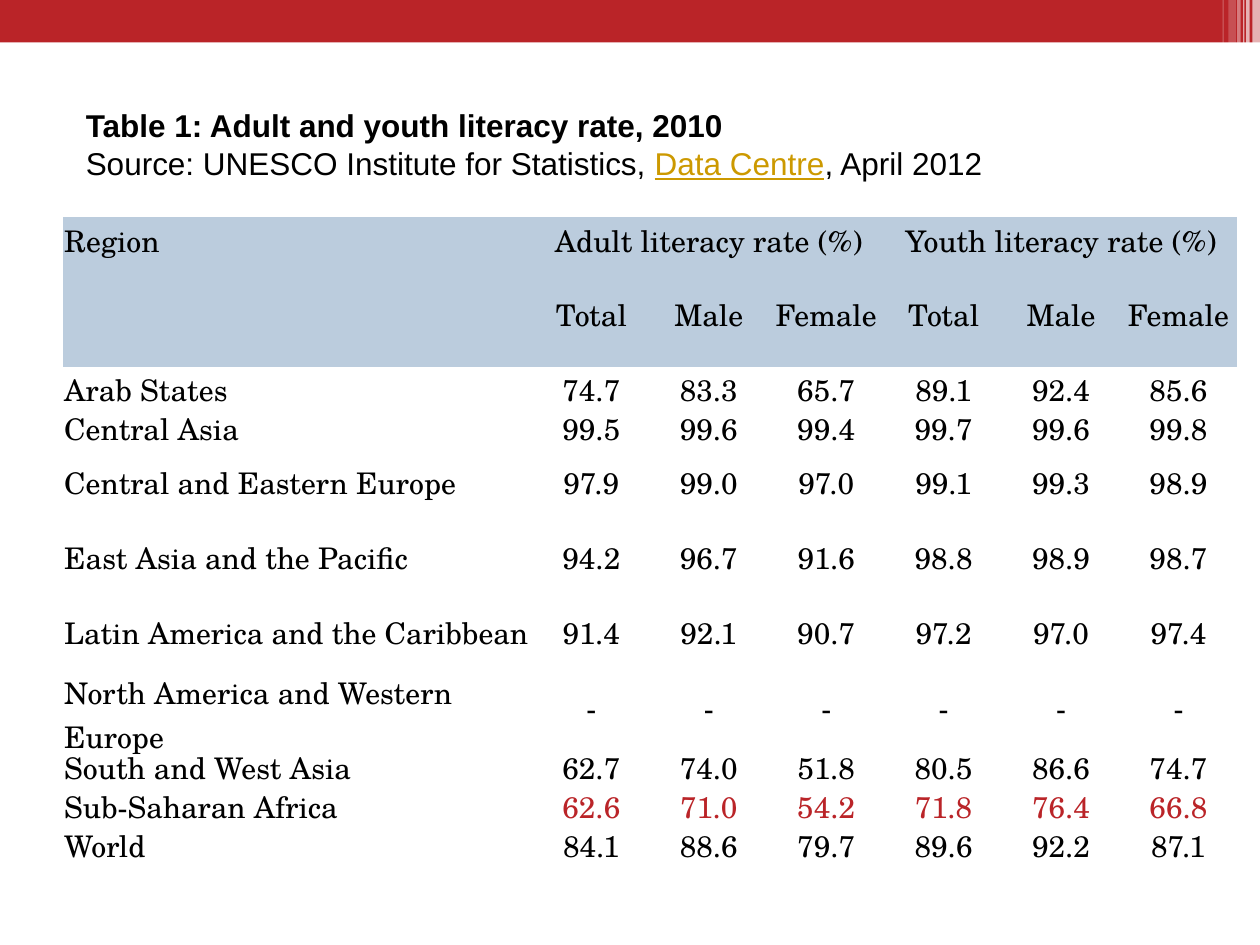
"""Build a slide with a table of adult and youth literacy rates by region."""
import pptx
import pptx.dml.color
import pptx.enum.shapes
import pptx.enum.text
import pptx.util
from lxml import etree

Pt = pptx.util.Pt
ALIGN = pptx.enum.text.PP_ALIGN
ANCHOR = pptx.enum.text.MSO_ANCHOR
RED, BLACK, WHITE, HEADER_BLUE, GOLD = "BA2428", "000000", "FFFFFF", "BBCCDD", "CC9900"

HEADING = [
    [("Table 1: Adult and youth literacy rate, 2010", BLACK, {"bold": True})],
    [
        ("Source: UNESCO Institute for Statistics, ", BLACK, {}),
        ("Data Centre", GOLD, {"underline": True}),
        (", April 2012", BLACK, {}),
    ],
]
GROUPS = ["Adult literacy rate (%)", "Youth literacy rate (%)"]
MEASURES = ["Total", "Male", "Female"]
TALL, SHORT = 42.85, 22.3
REGIONS = [
    ("Arab States", SHORT, "74.7 83.3 65.7 89.1 92.4 85.6"),
    ("Central Asia", SHORT, "99.5 99.6 99.4 99.7 99.6 99.8"),
    ("Central and Eastern Europe", TALL, "97.9 99.0 97.0 99.1 99.3 98.9"),
    ("East Asia and the Pacific", TALL, "94.2 96.7 91.6 98.8 98.9 98.7"),
    ("Latin America and the Caribbean", TALL, "91.4 92.1 90.7 97.2 97.0 97.4"),
    ("North America and Western Europe", TALL, "- - - - - -"),
    ("South and West Asia", SHORT, "62.7 74.0 51.8 80.5 86.6 74.7"),
    ("Sub-Saharan Africa", SHORT, "62.6 71.0 54.2 71.8 76.4 66.8"),
    ("World", SHORT, "84.1 88.6 79.7 89.6 92.2 87.1"),
]
HIGHLIGHTED = "Sub-Saharan Africa"
STRIPES = [
    (715.7, 4.3, 49, 65),
    (712.1, 2, 49, 65),
    (710.4, 0.7, 49, 60),
    (707, 2, 49, 40),
    (702, 4.3, 46, 20),
    (698.6, 0.7, 46, 30),
]
TABLE_LEFT, TABLE_TOP, REGION_WIDTH, RATE_WIDTH = 36, 124, 268.4, 67.1
NO_GRID_STYLE = "{2D5ABB26-0587-4C30-8999-92F81FD0307C}"
CELL_FORMAT = {f"margin_{side}": Pt(0.7) for side in ("left", "right", "top", "bottom")}


def apply(target, values):
    for name, value in values.items():
        setattr(target, name, value)


def paint(color_format, hex_color):
    color_format.rgb = pptx.dml.color.RGBColor.from_string(hex_color)


def add_run(paragraph, text, hex_color, **font_values):
    run = paragraph.add_run()
    run.text = text
    apply(run.font, font_values)
    paint(run.font.color, hex_color)


def add_band(slide, left, width, height, hex_color, opacity=100):
    band = slide.shapes.add_shape(
        pptx.enum.shapes.MSO_SHAPE.RECTANGLE, Pt(left), 0, Pt(width), Pt(height)
    )
    band.shadow.inherit = False
    band.line.fill.background()
    band.fill.solid()
    paint(band.fill.fore_color, hex_color)
    if opacity < 100:
        tint = next(band.fill._xPr.iter("{*}srgbClr"))
        tag = etree.QName(tint.tag)
        etree.SubElement(tint, f"{{{tag.namespace}}}alpha", val=str(opacity * 1000))


def add_heading(slide):
    heading = slide.shapes.title
    apply(heading, {"left": Pt(41.8), "top": Pt(56.9), "width": Pt(660), "height": Pt(51)})
    frame = heading.text_frame
    apply(frame, {
        "word_wrap": True,
        "vertical_anchor": ANCHOR.MIDDLE,
        "auto_size": pptx.enum.text.MSO_AUTO_SIZE.SHAPE_TO_FIT_TEXT,
    })
    for index, runs in enumerate(HEADING):
        paragraph = frame.add_paragraph() if index else frame.paragraphs[0]
        paragraph.alignment = ALIGN.LEFT
        for text, color, emphasis in runs:
            add_run(paragraph, text, color, name="Arial", size=Pt(18), **emphasis)


def write_cell(cell, text, alignment, anchor, text_color=BLACK, fill=None):
    apply(cell, {**CELL_FORMAT, "vertical_anchor": anchor})
    if fill:
        cell.fill.solid()
        paint(cell.fill.fore_color, fill)
    else:
        cell.fill.background()
    paragraph = cell.text_frame.paragraphs[0]
    paragraph.alignment = alignment
    if text:
        add_run(paragraph, text, text_color, name="TeX Gyre Schola", size=Pt(17))


def add_literacy_table(slide):
    heights = [TALL, TALL] + [height for _, height, _ in REGIONS]
    widths = [REGION_WIDTH] + [RATE_WIDTH] * len(GROUPS) * len(MEASURES)
    frame = slide.shapes.add_table(
        len(heights), len(widths), Pt(TABLE_LEFT), Pt(TABLE_TOP), Pt(sum(widths)), Pt(sum(heights))
    )
    table = frame.table
    apply(table, {"first_row": False, "horz_banding": False})
    next(table._tbl.iter("{*}tableStyleId")).text = NO_GRID_STYLE
    for column, width in zip(table.columns, widths):
        column.width = Pt(width)
    for row, height in zip(table.rows, heights):
        row.height = Pt(height)

    span = len(MEASURES)
    group_row = ["Region"]
    for group in GROUPS:
        group_row += [group] + [""] * (span - 1)
    header_rows = [group_row, [""] + MEASURES * len(GROUPS)]
    region_rows = [[region] + rates.split() for region, _, rates in REGIONS]
    for r, texts in enumerate(header_rows + region_rows):
        is_header = r < len(header_rows)
        for c, text in enumerate(texts):
            write_cell(
                table.cell(r, c),
                text,
                ALIGN.CENTER if c else ALIGN.LEFT,
                ANCHOR.TOP if is_header else ANCHOR.MIDDLE,
                RED if c and texts[0] == HIGHLIGHTED else BLACK,
                HEADER_BLUE if is_header else None,
            )
    table.cell(0, 0).merge(table.cell(1, 0))
    for first in range(1, len(widths), span):
        table.cell(0, first).merge(table.cell(0, first + span - 1))


def main():
    deck = pptx.Presentation()
    apply(deck, {"slide_width": Pt(720), "slide_height": Pt(540)})
    slide = deck.slides.add_slide(deck.slide_layouts[5])
    add_band(slide, 0, 720, 24.2, RED)
    for left, width, height, opacity in STRIPES:
        add_band(slide, left, width, height, WHITE, opacity)
    add_literacy_table(slide)
    add_heading(slide)
    deck.save("out.pptx")


if __name__ == "__main__":
    main()
